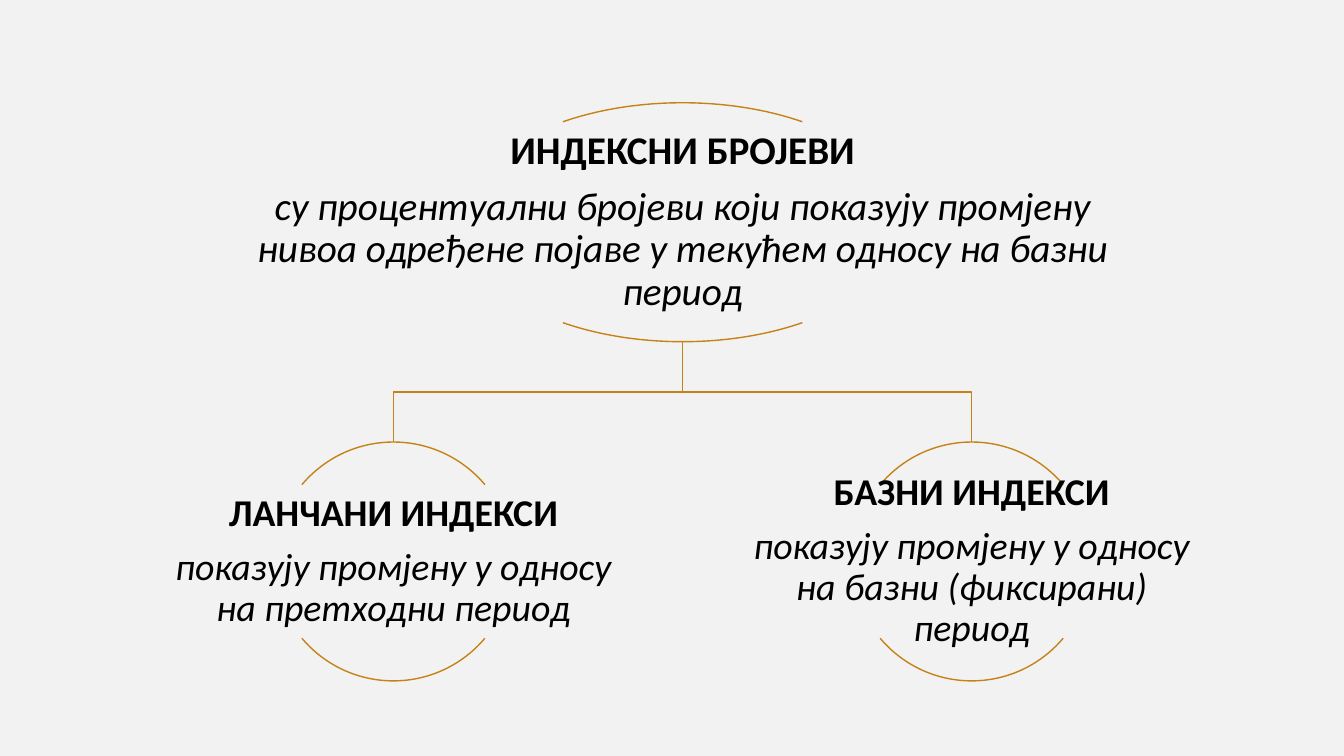
from pptx import Presentation
from pptx.dml.color import RGBColor
from pptx.enum.shapes import MSO_SHAPE
from pptx.enum.text import MSO_ANCHOR, MSO_AUTO_SIZE, PP_ALIGN
from pptx.util import Inches, Pt

ARC = MSO_SHAPE.ARC
MIDDLE = MSO_ANCHOR.MIDDLE
NO_FIT = MSO_AUTO_SIZE.NONE
CENTER = PP_ALIGN.CENTER

BACKGROUND, GOLD, BLACK = "F2F2F2", "C58217", "000000"
FONT = "Calibri"
TITLE_ONLY_LAYOUT = 5

# Upper and lower arc: start and end angle, in units of 100000/60000 degree
ARC_ANGLES = ((132, 192), (24, 84))

# All lengths follow from the height of one oval
OVAL = Inches(2.37)
ROOT_WIDTH = Inches(4.39)
CENTER_X = Inches(6.77)
ROOT_TOP = Inches(1.02)
LEVEL_GAP = OVAL * 0.42
BRANCH_OFFSET = OVAL * 1.21

ROOT = ("ИНДЕКСНИ БРОЈЕВИ",
        "су процентуални бројеви који показују промјену нивоа одређене појаве "
        "у текућем односу на базни период")
BRANCHES = (
    ("ЛАНЧАНИ ИНДЕКСИ", "показују промјену у односу на претходни период"),
    ("БАЗНИ ИНДЕКСИ", "показују промјену у односу на базни (фиксирани) период"),
)


def color(hex_value):
    return RGBColor.from_string(hex_value)


def style_outline(shape):
    shape.fill.background()
    shape.line.color.rgb = color(GOLD)
    shape.line.width = Pt(1)
    shape.shadow.inherit = False


def write_definition(frame, term, meaning, size):
    """Bold term above its meaning in italics."""
    frame.word_wrap = True
    frame.auto_size = NO_FIT
    frame.vertical_anchor = MIDDLE
    frame.margin_left = frame.margin_right = Inches(0.02)
    frame.margin_top = frame.margin_bottom = Inches(0.02)
    for text, is_term in ((term, True), (meaning, False)):
        paragraph = frame.paragraphs[0] if is_term else frame.add_paragraph()
        paragraph.alignment = CENTER
        paragraph.line_spacing = 0.9
        paragraph.space_after = Pt(size * 0.35)
        run = paragraph.add_run()
        run.text = text
        run.font.name = FONT
        run.font.size = Pt(size)
        run.font.bold = is_term
        run.font.italic = not is_term
        run.font.color.rgb = color(BLACK)


def add_node(slide, center_x, top, width, definition, size, title=None):
    """Two arcs of an oval around a text twice as wide as the oval."""
    for start, end in ARC_ANGLES:
        arc = slide.shapes.add_shape(
            ARC, int(center_x - width / 2), int(top), width, OVAL)
        arc.adjustments[0], arc.adjustments[1] = start, end
        style_outline(arc)

    box = [int(n) for n in
           (center_x - width, top + OVAL * 0.18, width * 2, OVAL * 0.64)]
    if title is None:
        holder = slide.shapes.add_textbox(*box)
    else:
        holder = title
        holder.left, holder.top, holder.width, holder.height = box
    write_definition(holder.text_frame, *definition, size)


def add_branch_line(slide, start_x, start_y, end_x, end_y):
    """Down, across and down again from the root to a branch."""
    middle_y = (start_y + end_y) / 2
    builder = slide.shapes.build_freeform(int(start_x), int(start_y))
    builder.add_line_segments(
        [(int(x), int(y)) for x, y in
         ((start_x, middle_y), (end_x, middle_y), (end_x, end_y))],
        close=False)
    style_outline(builder.convert_to_shape())


def build_index_tree(slide):
    root_bottom = ROOT_TOP + OVAL
    branch_top = root_bottom + LEVEL_GAP
    add_node(slide, CENTER_X, ROOT_TOP, ROOT_WIDTH, ROOT, 28,
             slide.shapes.title)
    for side, definition in zip((-1, 1), BRANCHES):
        branch_x = CENTER_X + side * BRANCH_OFFSET
        add_branch_line(slide, CENTER_X, root_bottom, branch_x, branch_top)
        add_node(slide, branch_x, branch_top, OVAL, definition, 27)


def main():
    deck = Presentation()
    deck.slide_width, deck.slide_height = Inches(13.33), Inches(7.5)
    slide = deck.slides.add_slide(deck.slide_layouts[TITLE_ONLY_LAYOUT])
    slide.background.fill.solid()
    slide.background.fill.fore_color.rgb = color(BACKGROUND)
    build_index_tree(slide)
    deck.save("out.pptx")


if __name__ == "__main__":
    main()
